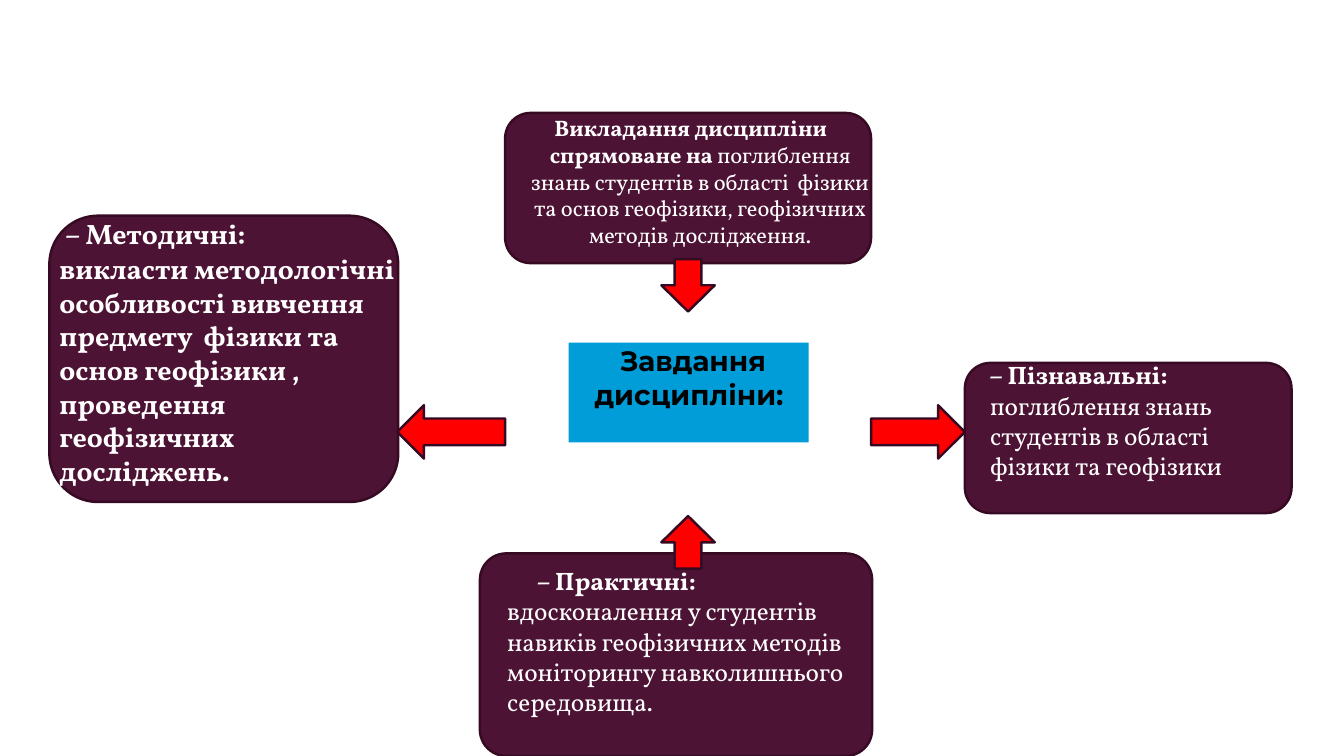
import pptx
import pptx.util
import pptx.dml.color
import pptx.enum.shapes
import pptx.enum.text

Inches = pptx.util.Inches
Pt = pptx.util.Pt
Kind = pptx.enum.shapes.MSO_SHAPE
Align = pptx.enum.text.PP_ALIGN


def color(code):
    return pptx.dml.color.RGBColor.from_string(code)


class Board:
    plum, edge, red, blue = "4D1334", "360A22", "FF0000", "009DD9"
    white, black = "FFFFFF", "000000"
    serif, sans = "Vollkorn", "Montserrat"

    def __init__(self, deck):
        self.slide = deck.slides.add_slide(deck.slide_layouts[5])

    def place(self, shape, box):
        shape.left, shape.top, shape.width, shape.height = map(Inches, box)

    def label(self, shape, paras, font, size, ink, indent, align):
        frame = shape.text_frame
        frame.word_wrap = True
        frame.auto_size = pptx.enum.text.MSO_AUTO_SIZE.NONE
        frame.vertical_anchor = pptx.enum.text.MSO_ANCHOR.TOP
        frame.margin_left = frame.margin_right = frame.margin_bottom = 0
        frame.margin_top = Inches(0.01)
        for index, runs in enumerate(paras):
            para = frame.add_paragraph() if index else frame.paragraphs[0]
            para.alignment = align
            para.space_before = Pt(1)
            para.font.name = font
            para.font.size = Pt(size)
            para.font.color.rgb = color(ink)
            props = para._p.get_or_add_pPr()
            for name, value in zip(("marL", "indent"), indent):
                props.set(name, str(Inches(value)))
            for text, bold in runs:
                run = para.add_run()
                run.text = text
                run.font.bold = bold

    def title(self, box, text):
        shape = self.slide.shapes.title
        self.place(shape, box)
        shape.fill.solid()
        shape.fill.fore_color.rgb = color(self.blue)
        self.label(shape, [[(text, True)]], self.sans, 20, self.black,
                   (0.01, 0), Align.CENTER)

    def shape(self, kind, box, fill):
        shape = self.slide.shapes.add_shape(kind, *map(Inches, box))
        shape.shadow.inherit = False
        shape.fill.solid()
        shape.fill.fore_color.rgb = color(fill)
        shape.line.color.rgb = color(self.edge)
        shape.line.width = Pt(1.75)
        return shape

    def card(self, box, area, paras, size, indent, align=Align.LEFT, curve=0.17):
        self.shape(Kind.ROUNDED_RECTANGLE, box, self.plum).adjustments[0] = curve
        text = self.slide.shapes.add_textbox(*map(Inches, area))
        self.label(text, paras, self.serif, size, self.white, indent, align)

    def arrow(self, kind, box):
        self.shape(kind, box, self.red)


def main():
    deck = pptx.Presentation()
    deck.slide_width = Inches(13.33)
    deck.slide_height = Inches(7.5)
    board = Board(deck)

    board.title((5.64, 3.4, 2.38, 0.99), " Завдання дисципліни:")
    board.card(
        (5.01, 1.12, 3.63, 1.49), (5.01, 1.12, 3.63, 1.61),
        [[(" Викладання дисципліни спрямоване на ", True),
          ("поглиблення знань студентів в області  фізики та основ геофізики, "
           "геофізичних методів дослідження.", False)]],
        16, (0.24, -0.23), Align.CENTER)
    board.card(
        (9.57, 3.6, 3.24, 1.49), (9.75, 3.56, 2.83, 1.54),
        [[(" – Пізнавальні: ", True),
          ("поглиблення знань студентів в області фізики та геофізики", False)]],
        18, (0.07, -0.06))
    board.card(
        (0.49, 2.14, 3.46, 2.84), (0.58, 2.14, 3.36, 3.04),
        [[(" – Методичні:", True)],
         [("викласти методологічні особливості вивчення предмету  фізики та "
           "основ геофізики , проведення геофізичних досліджень.", True)]],
        20, (0.01, 0))
    board.card(
        (4.76, 5.49, 3.89, 2.01), (5.02, 5.6, 3.36, 1.53),
        [[("– Практичні:", True),
          (" вдосконалення у студентів навиків геофізичних методів "
           "моніторингу навколишнього середовища.", False)]],
        18, (0.01, 0.29), curve=0.13)

    for kind, box in (
        (Kind.RIGHT_ARROW, (8.64, 4.02, 0.93, 0.53)),
        (Kind.LEFT_ARROW, (3.94, 4.02, 1.07, 0.53)),
        (Kind.DOWN_ARROW, (6.56, 2.57, 0.53, 0.52)),
        (Kind.UP_ARROW, (6.56, 5.12, 0.53, 0.52)),
    ):
        board.arrow(kind, box)

    deck.save("out.pptx")


if __name__ == "__main__":
    main()
